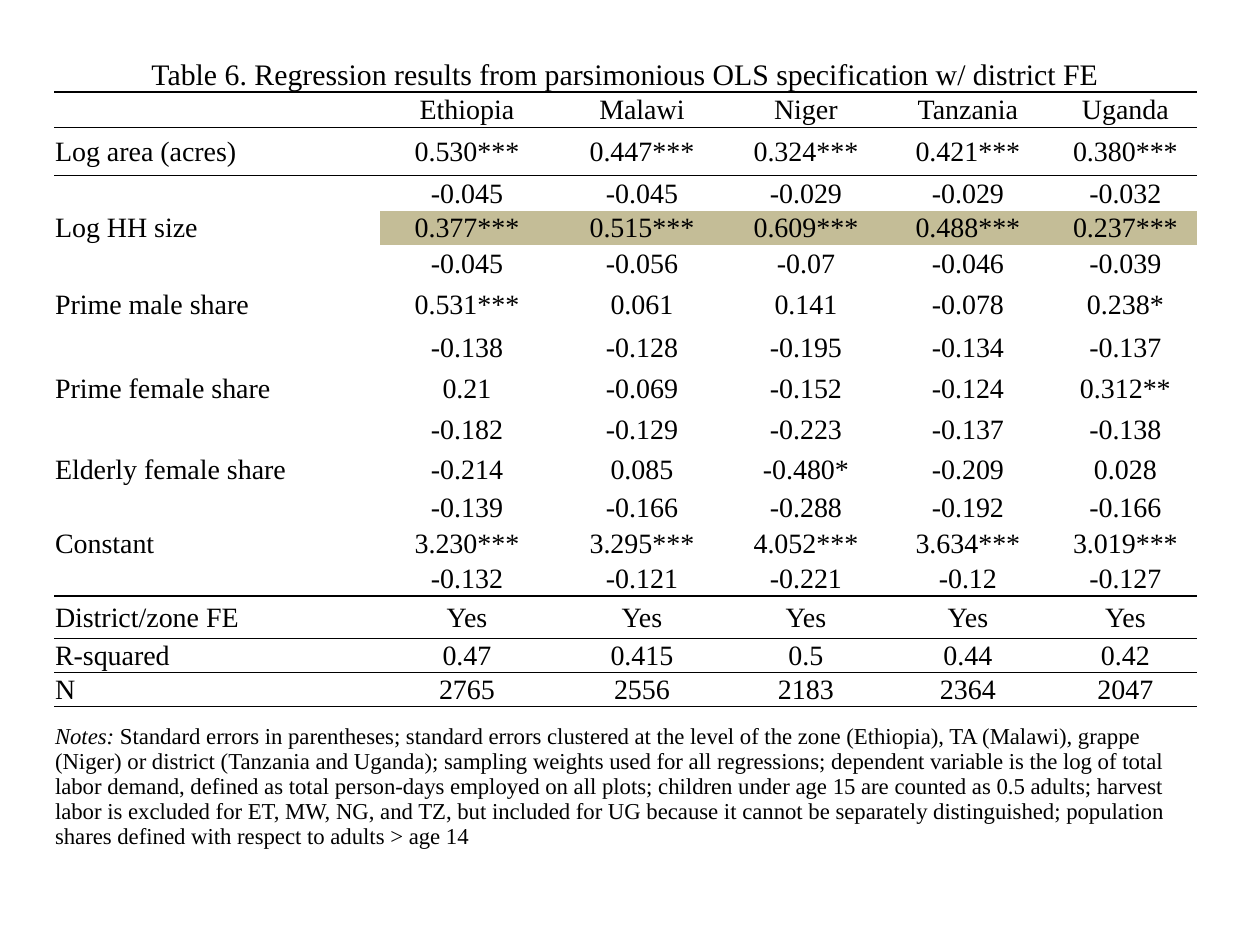
from pptx import Presentation
from pptx import util as u
from pptx.dml.color import RGBColor
from pptx.enum import text as t
from pptx.oxml import parse_xml
from pptx.oxml.ns import nsdecls, qn
from lxml import etree

PX = 914400 // 126
BLACK = RGBColor(0x00, 0x00, 0x00)
TAN = RGBColor(0xC4, 0xBD, 0x97)
FONT = "Times New Roman"
NO_STYLE = "{2D5ABB26-0587-4C30-8999-92F81FD0307C}"

TITLE = "Table 6. Regression results from parsimonious OLS specification w/ district FE"
HEAD = "Notes: "
NOTES = (
    "Standard errors in parentheses; standard errors clustered at the level of the zone "
    "(Ethiopia), TA (Malawi), grappe (Niger) or district (Tanzania and Uganda); sampling "
    "weights used for all regressions; dependent variable is the log of total labor demand, "
    "defined as total person-days employed on all plots; children under age 15 are counted "
    "as 0.5 adults; harvest labor is excluded for ET, MW, NG, and TZ, but included for UG "
    "because it cannot be separately distinguished; population shares defined with respect "
    "to adults > age 14"
)

COLS = [326, 174, 176, 152, 172, 143]
# Row label, values for the five countries, row height in px
ROWS = [
    ("", "Ethiopia Malawi Niger Tanzania Uganda", 34),
    ("Log area (acres)", "0.530*** 0.447*** 0.324*** 0.421*** 0.380***", 48),
    ("", "-0.045 -0.045 -0.029 -0.029 -0.032", 35),
    ("Log HH size", "0.377*** 0.515*** 0.609*** 0.488*** 0.237***", 34),
    ("", "-0.045 -0.056 -0.07 -0.046 -0.039", 37),
    ("Prime male share", "0.531*** 0.061 0.141 -0.078 0.238*", 46),
    ("", "-0.138 -0.128 -0.195 -0.134 -0.137", 40),
    ("Prime female share", "0.21 -0.069 -0.152 -0.124 0.312**", 42),
    ("", "-0.182 -0.129 -0.223 -0.137 -0.138", 40),
    ("Elderly female share", "-0.214 0.085 -0.480* -0.209 0.028", 40),
    ("", "-0.139 -0.166 -0.288 -0.192 -0.166", 37),
    ("Constant", "3.230*** 3.295*** 4.052*** 3.634*** 3.019***", 34),
    ("", "-0.132 -0.121 -0.221 -0.12 -0.127", 34),
    ("District/zone FE", "Yes Yes Yes Yes Yes", 43),
    ("R-squared", "0.47 0.415 0.5 0.44 0.42", 34),
    ("N", "2765 2556 2183 2364 2047", 34),
]
TITLE_H, NOTES_H = 34, 159
RULED = {0, 1, 13, 14, 16}  # rows with a line beneath
SHADED = 4


def write(cell, words, size, align=t.PP_ALIGN.LEFT, **extra):
    """Append one run to the cell's paragraph."""
    para = cell.text_frame.paragraphs[0]
    para.alignment = align
    if not words:  # keeps a blank cell from stretching its row
        etree.SubElement(para._p, qn("a:endParaRPr"), sz=str(size * 100))
        return
    run = para.add_run()
    run.text = words
    style = {"name": FONT, "size": u.Pt(size), "bold": False, "italic": False, **extra}
    for key, val in style.items():
        setattr(run.font, key, val)
    run.font.color.rgb = BLACK


def rule(cell, side):
    """Draw a 1 pt line on side T or B, ahead of the cell's fill."""
    line = parse_xml(
        f'<a:ln{side} {nsdecls("a")} w="12700"><a:solidFill>'
        f'<a:srgbClr val="{BLACK}"/></a:solidFill></a:ln{side}>')
    cell._tc.get_or_add_tcPr().insert(0, line)


def dress(cell, row, col):
    """Set margins, fill and lines of one cell."""
    look = {"margin_left": PX, "margin_right": PX, "margin_top": PX,
            "margin_bottom": 0, "vertical_anchor": t.MSO_ANCHOR.MIDDLE}
    for key, val in look.items():
        setattr(cell, key, val)
    if row == SHADED and col > 0:
        cell.fill.solid()
        cell.fill.fore_color.rgb = TAN
    else:
        cell.fill.background()
    if row in RULED:
        rule(cell, "B")
    if row - 1 in RULED:
        rule(cell, "T")


def results(slide, left, top):
    """Regression table with its title row and notes row."""
    highs = [TITLE_H, *(r[2] for r in ROWS), NOTES_H]
    last = len(highs) - 1
    frame = slide.shapes.add_table(len(highs), len(COLS), left * PX, top * PX,
                                   sum(COLS) * PX, sum(highs) * PX)
    table = frame.table
    table.first_row = table.horz_banding = False
    table._tbl.tblPr.find(qn("a:tableStyleId")).text = NO_STYLE
    for col, wide in zip(table.columns, COLS):
        col.width = wide * PX
    for row, high in zip(table.rows, highs):
        row.height = high * PX
    for r in range(len(highs)):
        for c in range(len(COLS)):
            dress(table.cell(r, c), r, c)

    # Title and notes span the full width
    for r in (0, last):
        table.cell(r, 0).merge(table.cell(r, len(COLS) - 1))
    write(table.cell(0, 0), TITLE, 17, t.PP_ALIGN.CENTER)
    write(table.cell(last, 0), HEAD, 13, italic=True)
    write(table.cell(last, 0), NOTES, 13)

    # Labels and values
    for r, (label, vals, _) in enumerate(ROWS, 1):
        write(table.cell(r, 0), label, 16)
        for c, val in enumerate(vals.split(), 1):
            write(table.cell(r, c), val, 16, t.PP_ALIGN.CENTER)


def main():
    deck = Presentation()
    deck.slide_width, deck.slide_height = u.Inches(10), u.Inches(7.5)
    slide = deck.slides.add_slide(deck.slide_layouts[6])
    results(slide, 54, 58)
    deck.save("out.pptx")


if __name__ == "__main__":
    main()
